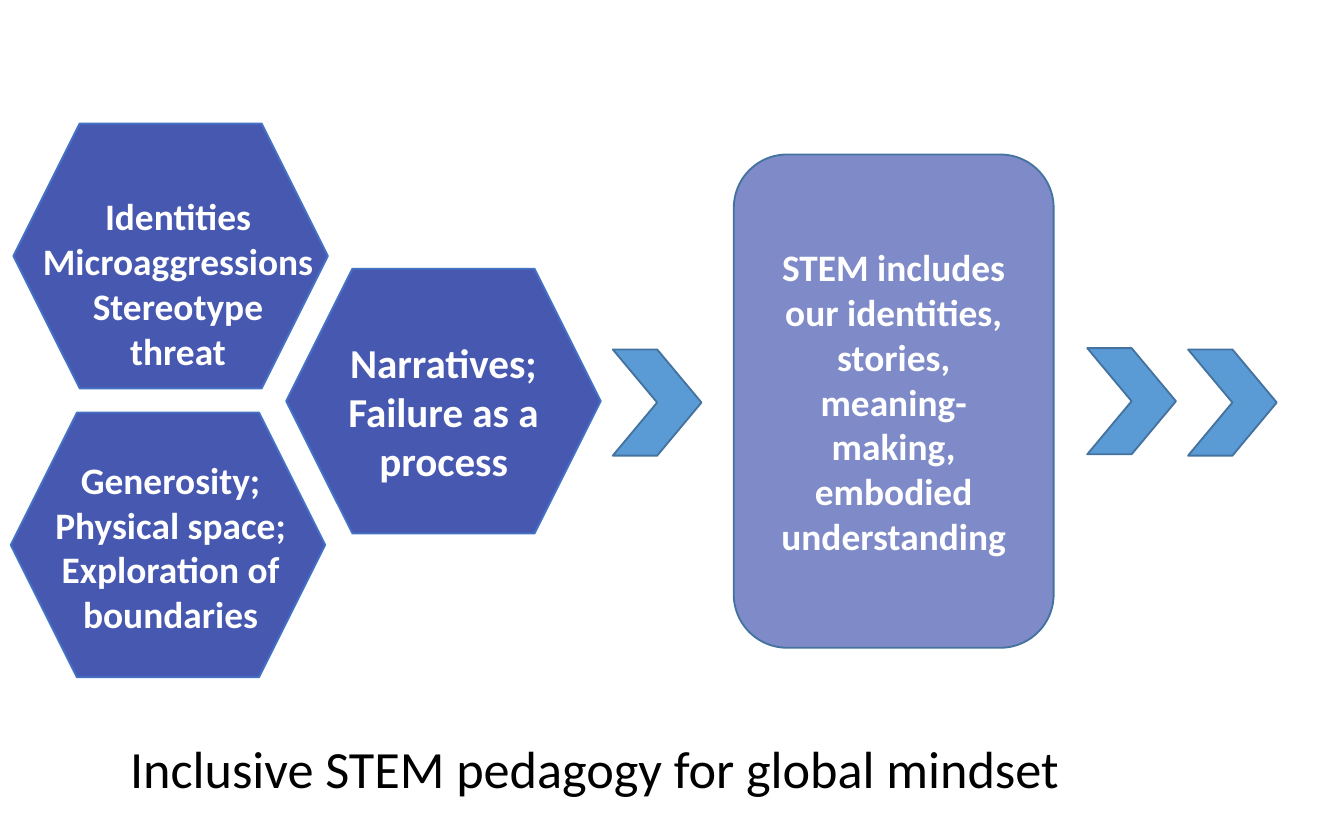
from lxml import etree
from pptx import Presentation
from pptx.dml.color import RGBColor
from pptx.enum.shapes import MSO_SHAPE
from pptx.enum.text import MSO_ANCHOR, PP_ALIGN
from pptx.oxml.ns import qn
from pptx.util import Emu, Pt

PX = 9144  # 100 px to the inch
NAVY = RGBColor(0x01, 0x18, 0x93)
SKY = RGBColor(0x5B, 0x9B, 0xD5)
HEX_LINE = RGBColor(0x44, 0x72, 0xC4)
STEEL = RGBColor(0x43, 0x73, 0x9E)
WHITE = RGBColor(0xFF, 0xFF, 0xFF)
BLACK = RGBColor(0x00, 0x00, 0x00)
HEXAGON, CHEVRON = MSO_SHAPE.HEXAGON, MSO_SHAPE.CHEVRON
ROUNDED = MSO_SHAPE.ROUNDED_RECTANGLE
TOP, MIDDLE = MSO_ANCHOR.TOP, MSO_ANCHOR.MIDDLE
LEFT, CENTER = PP_ALIGN.LEFT, PP_ALIGN.CENTER

prs = Presentation()
prs.slide_width, prs.slide_height = Emu(1000 * PX), Emu(625 * PX)
s = prs.slides.add_slide(prs.slide_layouts[6])


def add_shape(kind, box, fill, line, opacity=100):
    """Add a flat outlined shape; opacity is a percentage."""
    sp = s.shapes.add_shape(kind, *(Emu(v * PX) for v in box))
    sp.shadow.inherit = False
    sp.fill.solid()
    sp.fill.fore_color.rgb = fill
    sp.line.color.rgb = line
    sp.line.width = Pt(1)
    if opacity < 100:
        color = sp._element.spPr.find(qn("a:solidFill"))[0]
        etree.SubElement(color, qn("a:alpha"), val=str(opacity * 1000))
    return sp


def set_text(sp, lines, size, color=WHITE, bold=True, align=CENTER, anchor=TOP):
    tf = sp.text_frame
    tf.word_wrap = True
    tf.vertical_anchor = anchor
    font = {"name": "Calibri", "size": Pt(size), "bold": bold}
    for i, line in enumerate(lines):
        p = tf.add_paragraph() if i else tf.paragraphs[0]
        p.alignment = align
        r = p.add_run()
        r.text = line
        r.font.color.rgb = color
        for key, value in font.items():
            setattr(r.font, key, value)


# Hexagons: left, top, label box, label size, label lines
hexagons = [
    (10, 92, (8, 139, 249, 145), 20,
     ["Identities", "Microaggressions", "Stereotype", "threat"]),
    (213, 200, (219, 246, 222, 121), 22,
     ["Narratives;", "Failure as a process"]),
    (8, 307, (4, 335, 246, 145), 20,
     ["Generosity; Physical space; Exploration of boundaries"]),
]
for left, top, label_box, size, lines in hexagons:
    add_shape(HEXAGON, (left, top, 234, 197), NAVY, HEX_LINE, 72)
    label = s.shapes.add_textbox(*(Emu(v * PX) for v in label_box))
    set_text(label, lines, size)

for left, top in [(456, 260), (809, 259), (884, 260)]:
    add_shape(CHEVRON, (left, top, 66, 79), SKY, STEEL)

outcome = add_shape(ROUNDED, (546, 115, 238, 367), NAVY, STEEL, 50)
set_text(outcome, ["STEM includes our identities, stories, meaning-making, "
                   "embodied understanding"], 20, anchor=MIDDLE)

caption = s.shapes.add_textbox(*(Emu(v * PX) for v in (87, 543, 830, 57)))
set_text(caption, ["Inclusive STEM pedagogy for global mindset"], 28,
         color=BLACK, bold=False, align=LEFT)

prs.save("out.pptx")
